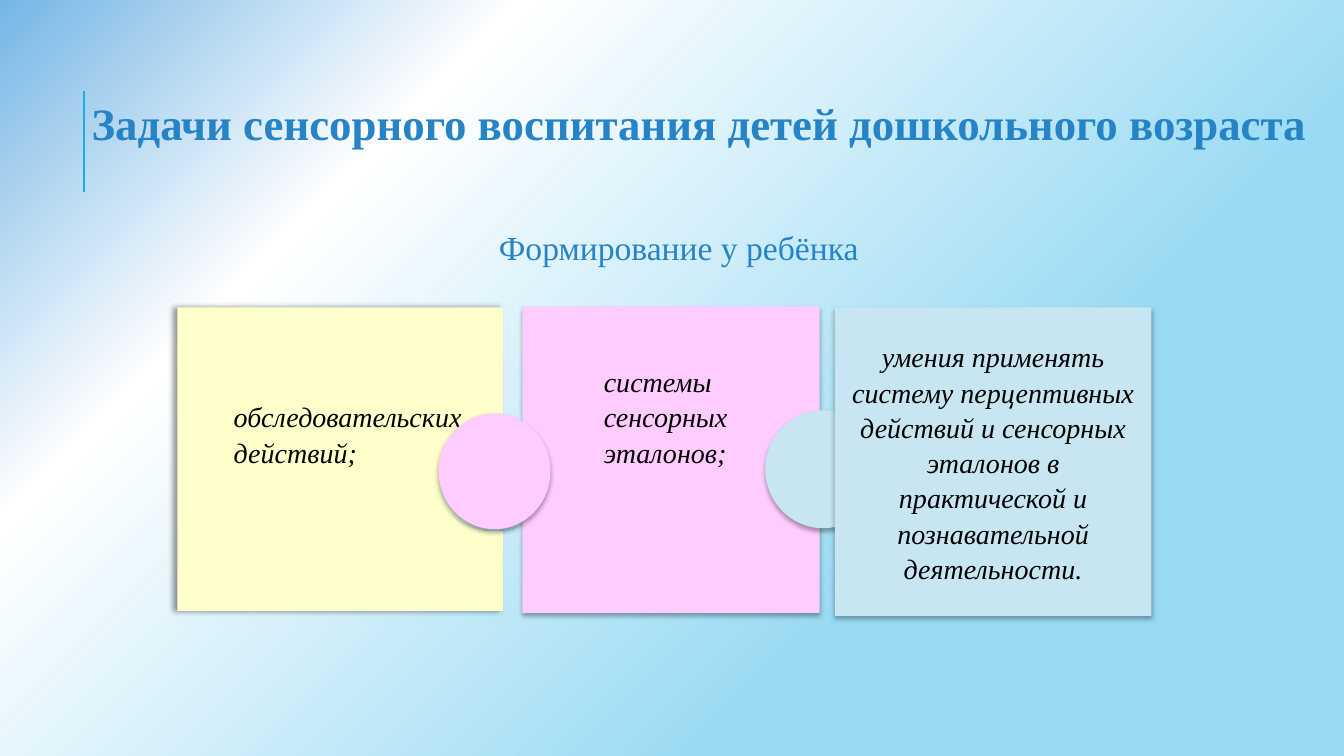
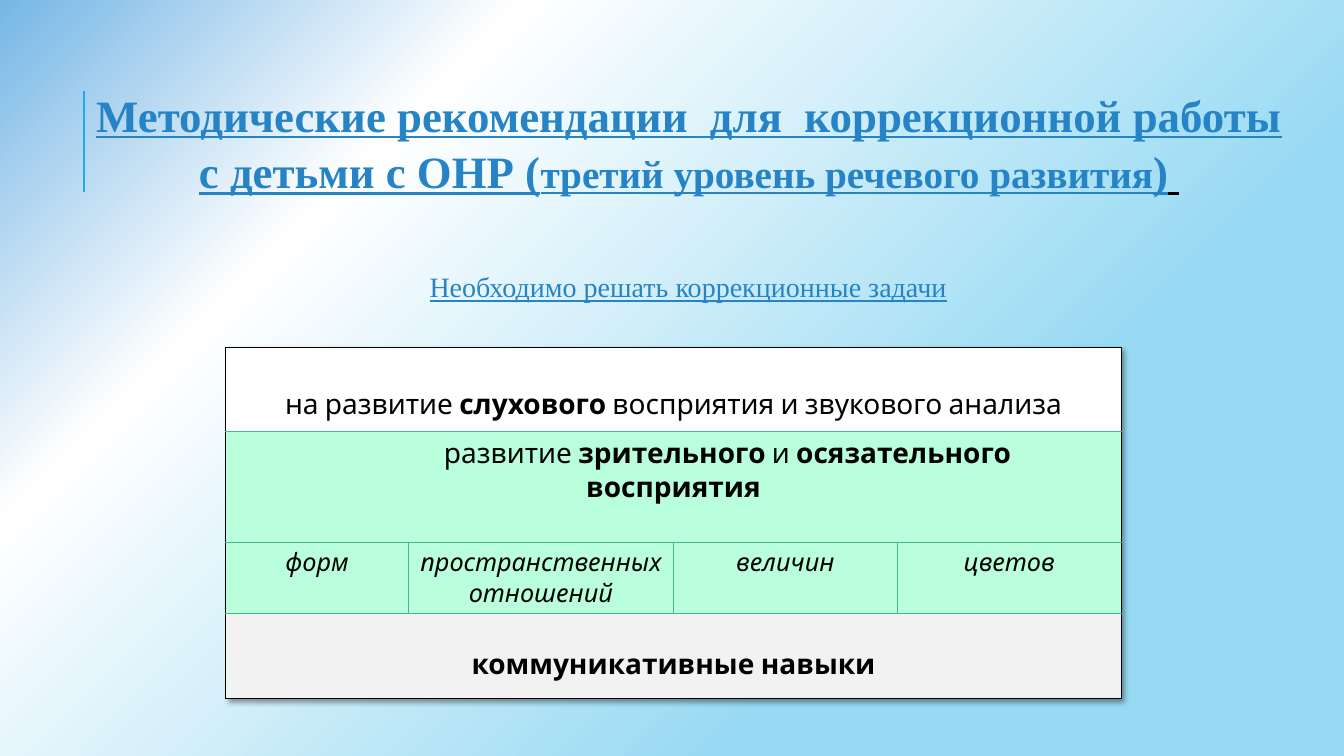
from dataclasses import dataclass

from pptx import Presentation
from pptx.dml.color import RGBColor
from pptx.enum.shapes import MSO_CONNECTOR, MSO_SHAPE
from pptx.enum.text import MSO_ANCHOR, PP_ALIGN
from pptx.oxml import parse_xml
from pptx.oxml.ns import nsdecls
from pptx.util import Inches, Pt


@dataclass(frozen=True)
class Theme:
    serif: str = "Times New Roman"
    sans: str = "Cabin"
    blue: str = "2683C6"
    accent: str = "1CADE4"
    black: str = "000000"
    white: str = "FFFFFF"
    yellow: str = "FFFFCC"
    pink: str = "FFCCFF"
    pale_blue: str = "C7E6F1"
    mint: str = "B9FFDC"
    grey: str = "F2F2F2"
    teal: str = "42BA97"
    backdrop: tuple = ((30, "98DAF3", 100), (75, "FFFFFF", 100), (100, "75B6E5", 100))
    sheen: tuple = ((0, "FFFFFF", 3), (50, "BAE1FF", 100), (100, "DDEFFF", 100))
    title: int = 32
    title_note: int = 28
    subtitle: int = 24
    body: int = 20
    small: int = 18
    line_spacing: float = 1.05


THEME = Theme()
CORNER_GLOW = ('<a:path path="circle"><a:fillToRect l="100000" t="100000"/></a:path>'
               '<a:tileRect r="-100000" b="-100000"/>')
LEFT_TO_RIGHT = '<a:lin ang="0" scaled="1"/>'


@dataclass(frozen=True)
class Span:
    """A stretch of text in one format."""
    text: str
    size: int = THEME.body
    font: str = THEME.serif
    color: str = THEME.black
    bold: bool = False
    italic: bool = False
    underline: bool = False


def write(frame, paragraphs, align=PP_ALIGN.LEFT, spacing=THEME.line_spacing):
    """Fill a text frame with paragraphs, each a list of spans."""
    frame.word_wrap = True
    frame.text = "\n".join("" for _ in paragraphs)
    for paragraph, spans in zip(frame.paragraphs, paragraphs):
        paragraph.alignment = align
        paragraph.line_spacing = spacing
        for span in spans:
            run = paragraph.add_run()
            run.text = span.text
            font = run.font
            font.name, font.size = span.font, Pt(span.size)
            font.bold, font.italic, font.underline = span.bold, span.italic, span.underline
            font.color.rgb = RGBColor.from_string(span.color)


def inches(box):
    return [Inches(length) for length in box]


def add_text(shapes, box, paragraphs, align=PP_ALIGN.LEFT):
    write(shapes.add_textbox(*inches(box)).text_frame, paragraphs, align)


def replace_fill(properties, stops, direction):
    """Put a gradient in the place of a solid fill."""
    marks = "".join(
        f'<a:gs pos="{position * 1000}"><a:srgbClr val="{color}">'
        f'<a:alpha val="{opacity * 1000}"/></a:srgbClr></a:gs>'
        for position, color, opacity in stops)
    gradient = parse_xml(f'<a:gradFill {nsdecls("a")} rotWithShape="1">'
                         f'<a:gsLst>{marks}</a:gsLst>{direction}</a:gradFill>')
    solid = properties.xpath("./a:solidFill")[0]
    properties.replace(solid, gradient)


def shadow_effect(opacity=32, blur=3.5, distance=2.2, angle=90):
    return parse_xml(
        f'<a:effectLst {nsdecls("a")}><a:outerShdw blurRad="{Pt(blur)}" dist="{Pt(distance)}" '
        f'dir="{angle * 60000}" algn="t" rotWithShape="0"><a:srgbClr val="{THEME.black}">'
        f'<a:alpha val="{opacity * 1000}"/></a:srgbClr></a:outerShdw></a:effectLst>')


def add_piece(shapes, kind, box, color, effect=None):
    piece = shapes.add_shape(kind, *inches(box))
    piece.shadow.inherit = False
    piece.fill.solid()
    piece.fill.fore_color.rgb = RGBColor.from_string(color)
    piece.line.fill.background()
    if effect is not None:
        properties = piece.element.spPr
        properties.replace(properties.xpath("./a:effectLst")[0], effect)
    return piece


def set_backdrop(master):
    master.background.fill.solid()
    replace_fill(master.element.xpath("./p:cSld/p:bg/p:bgPr")[0], THEME.backdrop, CORNER_GLOW)


def add_titled_slide(prs, box, title):
    """Add a blank slide with the accent rule and a centred title."""
    slide = prs.slides.add_slide(prs.slide_layouts[6])
    rule = slide.shapes.add_connector(MSO_CONNECTOR.STRAIGHT, *inches((0.83, 1.9, 0.83, 0.9)))
    rule.line.color.rgb = RGBColor.from_string(THEME.accent)
    rule.line.width = Pt(1.5)
    rule.element.spPr.append(parse_xml(f'<a:effectLst {nsdecls("a")}/>'))
    add_text(slide.shapes, box, title, PP_ALIGN.CENTER)
    return slide


def add_puzzle(shapes, left, top):
    """Three cards, joined by round knobs."""
    def place(x, y, width, height):
        return left + x, top + y, width, height

    def phrase(text):
        return [Span(text, italic=True)]

    add_piece(shapes, MSO_SHAPE.RECTANGLE, place(0, 0, 3.23, 3.01), THEME.yellow,
              shadow_effect(40, 4, 3, 180))
    add_text(shapes, place(0.46, 0.85, 2.47, 0.8), [phrase("обследовательских действий;")])

    socket = add_piece(shapes, MSO_SHAPE.CHORD, place(2.53, 1.09, 1.22, 1.12), THEME.white)
    for index, degrees in enumerate((47.34, 166.47)):
        socket.adjustments[index] = degrees * 0.6
    replace_fill(socket.element.spPr, THEME.sheen, LEFT_TO_RIGHT)

    add_piece(shapes, MSO_SHAPE.RECTANGLE, place(3.42, -0.01, 2.95, 3.04), THEME.pink,
              shadow_effect())
    add_piece(shapes, MSO_SHAPE.FLOWCHART_CONNECTOR, place(2.59, 1.05, 1.11, 1.15), THEME.pink,
              shadow_effect())
    add_text(shapes, place(4.13, 0.5, 1.51, 1.15),
             [phrase(word) for word in ("системы", "сенсорных", "эталонов;")])

    add_piece(shapes, MSO_SHAPE.FLOWCHART_CONNECTOR, place(5.83, 1.02, 1.15, 1.17),
              THEME.pale_blue, shadow_effect())
    skills = add_piece(shapes, MSO_SHAPE.RECTANGLE, place(6.52, 0, 3.14, 3.06),
                       THEME.pale_blue, shadow_effect())
    skills.text_frame.vertical_anchor = MSO_ANCHOR.MIDDLE
    write(skills.text_frame,
          [phrase("умения применять систему перцептивных действий и сенсорных эталонов "
                  "в практической и познавательной деятельности.")], PP_ALIGN.CENTER)


def set_borders(cell, colors):
    """Draw the left, right, top and bottom borders of a cell."""
    properties = cell._tc.get_or_add_tcPr()
    for side, color in zip("LRTB", colors):
        fill = f'<a:solidFill><a:srgbClr val="{color}"/></a:solidFill>' if color else "<a:noFill/>"
        properties.append(parse_xml(
            f'<a:ln{side} {nsdecls("a")} w="{Pt(1)}">{fill}</a:ln{side}>'))


def add_tasks_table(shapes, left, top):
    def words(text, bold=False, italic=False, size=THEME.body):
        return Span(text, size, THEME.sans, bold=bold, italic=italic)

    def aspect(text):
        return [[words(text, italic=True, size=THEME.small)]]

    # height, fill, top margin, cell texts; a single text spans the row
    rows = [
        (0.83, THEME.white, 0.39, [
            [[words("на развитие "), words("слухового", True),
              words(" восприятия и звукового анализа")]]]),
        (1.1, THEME.mint, 0.05, [
            [[words("развитие "), words("зрительного ", True), words("и"),
              words(" осязательного", True)],
             [words("восприятия", True)]]]),
        (0.71, THEME.mint, 0.05, [
            aspect(text) for text in
            ("форм", "пространственных отношений", "величин", "цветов")]),
        (0.84, THEME.grey, 0.33, [[[words("коммуникативные навыки", True)]]]),
    ]
    widths = (1.81, 2.63, 2.22, 2.22)
    height = sum(row[0] for row in rows)
    frame = shapes.add_table(len(rows), len(widths),
                             *inches((left, top, sum(widths), height)))
    table = frame.table
    table.first_row = table.horz_banding = False
    table._tbl.tblPr.insert(0, shadow_effect(40, 4, 3, 45))
    for column, width in zip(table.columns, widths):
        column.width = Inches(width)

    last_row, last_column = len(rows) - 1, len(widths) - 1
    for r, (row_height, color, margin, texts) in enumerate(rows):
        table.rows[r].height = Inches(row_height)
        spanned = len(texts) == 1
        if spanned:
            table.cell(r, 0).merge(table.cell(r, last_column))
        for c in range(len(widths)):
            cell = table.cell(r, c)
            inner = None if spanned else THEME.teal
            set_borders(cell, (
                THEME.black if c == 0 else inner,
                THEME.black if c == last_column or cell.is_merge_origin else inner,
                THEME.black if r == 0 else THEME.teal,
                THEME.black if r == last_row else THEME.teal))
            cell.fill.solid()
            cell.fill.fore_color.rgb = RGBColor.from_string(color)
            cell.margin_top = Inches(margin)
            if c < len(texts):
                write(cell.text_frame, texts[c], PP_ALIGN.CENTER, 1.0)
    sight_and_touch = table.cell(1, 0).text_frame.paragraphs[0]
    sight_and_touch._p.get_or_add_pPr().set("marL", str(Inches(1.07)))


def build_goals_slide(prs):
    slide = add_titled_slide(prs, (0.81, 0.87, 12.25, 1.18), [
        [Span("Задачи сенсорного воспитания детей дошкольного возраста",
              THEME.title, color=THEME.blue, bold=True)]])
    add_puzzle(slide.shapes.add_group_shape().shapes, 1.76, 3.05)
    add_text(slide.shapes, (4.85, 2.18, 4.21, 0.5),
             [[Span("Формирование у ребёнка", THEME.subtitle, color=THEME.blue)]])


def build_methods_slide(prs):
    def heading(text, size=THEME.title, color=THEME.blue):
        return Span(text, size, color=color, bold=True, underline=True)

    slide = add_titled_slide(prs, (0.83, 0.79, 12.01, 1.18), [
        [heading("Методические рекомендации  для  коррекционной работы ")],
        [heading("с детьми с ОНР ("),
         heading("третий уровень речевого развития", THEME.title_note),
         heading(")"), heading(" ", color=THEME.black)]])
    add_text(slide.shapes, (4.14, 2.61, 5.37, 0.44),
             [[Span("Необходимо решать коррекционные задачи",
                    color=THEME.blue, underline=True)]], PP_ALIGN.CENTER)
    add_tasks_table(slide.shapes, 2.24, 3.45)


def main():
    prs = Presentation()
    prs.slide_width, prs.slide_height = Inches(13.33), Inches(7.5)
    set_backdrop(prs.slide_master)
    build_goals_slide(prs)
    build_methods_slide(prs)
    prs.save("out.pptx")


if __name__ == "__main__":
    main()
